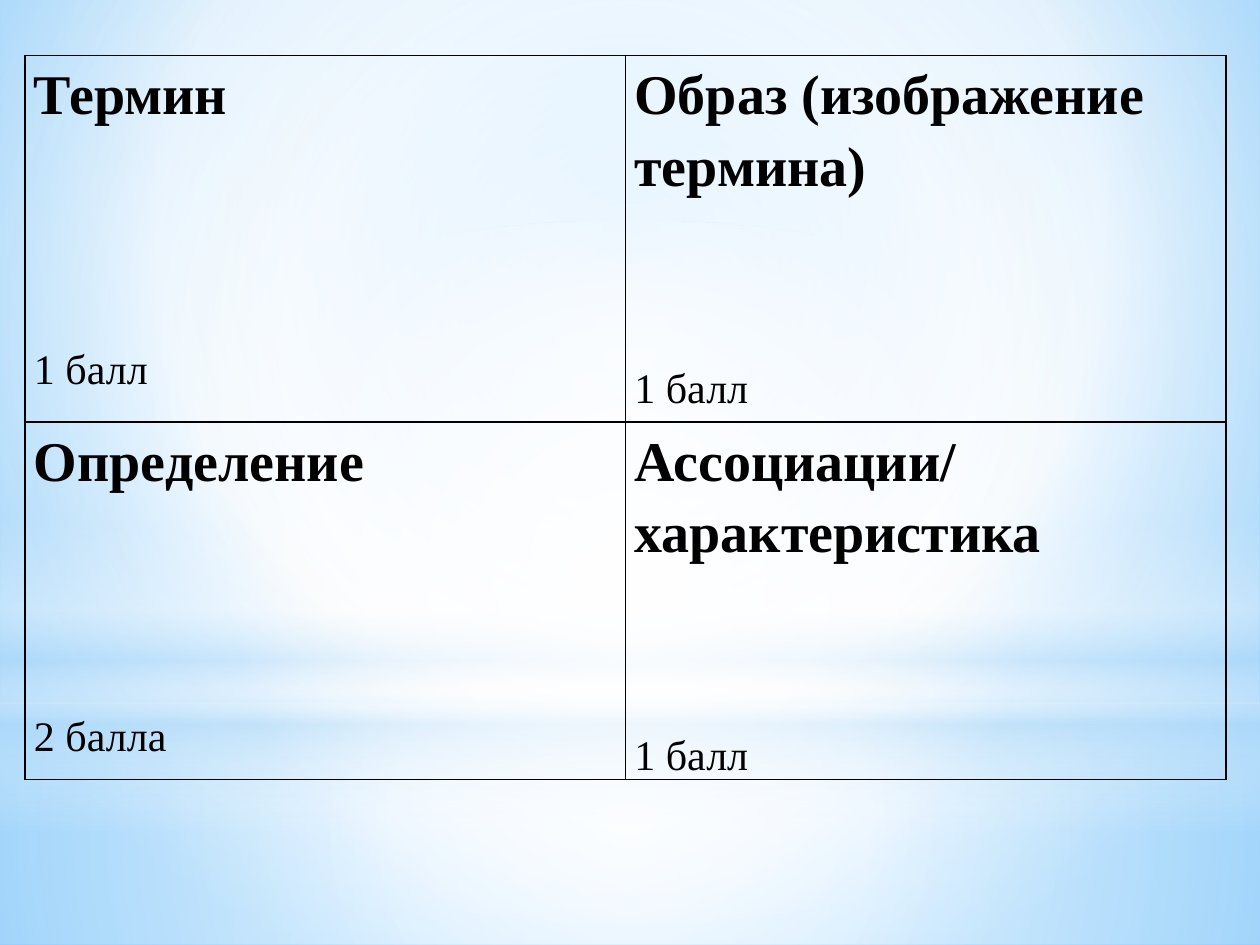
from lxml import etree
from pptx import Presentation
from pptx import util as u
from pptx.dml.color import RGBColor
from pptx.enum import shapes
from pptx.oxml.ns import qn

FONT = "Times New Roman"
CELLS = [
    [("Термин", "1 балл", 122), ("Образ (изображение термина)", "1 балл", 92)],
    [("Определение", "2 балла", 122), ("Ассоциации/характеристика", "1 балл", 92)],
]
CENTRE = (50, 50, 50, 50)
LAYERS = [
    ("RECTANGLE", (0, 5.58, 10, 1.92), CENTRE,
     [(0, "FFFFFF", 91), (37, "FFFFFF", 76), (100, "B4DCFA", 79)]),
    ("RECTANGLE", (0, 0, 10, 5.58), CENTRE,
     [(0, "FFFFFF", 89), (48, "FFFFFF", 62), (100, "B4DCFA", 79)]),
    ("RECTANGLE", (0, 4.12, 10, 2.5), None,
     [(0, "FFFFFF", 0), (29, "FFFFFF", 30), (45, "B4DCFA", 40),
      (55, "FFFFFF", 26), (65, "B4DCFA", 60), (100, "FFFFFF", 0)]),
    ("OVAL", (0, 1.75, 10, 5.58), CENTRE,
     [(0, "FFFFFF", 100), (56, "FFFFFF", 0)]),
]


def color(value):
    """Turn a hex string into a colour."""
    return RGBColor.from_string(value)


def add_node(parent, tag, **attrs):
    """Append a drawing element with the given attributes."""
    return etree.SubElement(parent, qn(tag), {k: str(v) for k, v in attrs.items()})


def set_gradient(fill, props, stops, focus):
    """Give a fill a circular gradient, or a vertical one without a focus."""
    fill.gradient()
    grad = props.find(qn("a:gradFill"))
    for child in list(grad):
        grad.remove(child)
    stop_list = add_node(grad, "a:gsLst")
    for pos, value, alpha in stops:
        stop = add_node(stop_list, "a:gs", pos=pos * 1000)
        tint = add_node(stop, "a:srgbClr", val=value)
        add_node(tint, "a:alpha", val=alpha * 1000)
    if focus:
        sides = {k: v * 1000 for k, v in zip("ltrb", focus)}
        add_node(add_node(grad, "a:path", path="circle"), "a:fillToRect", **sides)
    else:
        add_node(grad, "a:lin", ang=90 * 60000, scaled=0)


def add_backdrop(s):
    """Paint the blue background and its soft light layers."""
    fill = s.background.fill
    props = s._element.find(".//" + qn("p:bgPr"))
    set_gradient(fill, props, [(0, "9ED5FF", 100), (60, "FFFFFF", 100),
                               (100, "5BB9FF", 100)], (20, 10, 20, 60))
    for kind, box, focus, stops in LAYERS:
        sp = s.shapes.add_shape(shapes.MSO_SHAPE[kind], *map(u.Inches, box))
        sp.shadow.inherit = False
        sp.line.fill.background()
        set_gradient(sp.fill, sp._element.spPr, stops, focus)


def add_borders(cell):
    """Draw a thin black line on each side of a cell."""
    props = cell._tc.get_or_add_tcPr()
    for side in "LRTB":
        line = add_node(props, f"a:ln{side}", w=u.Pt(1))
        add_node(add_node(line, "a:solidFill"), "a:srgbClr", val="000000")


def fill_cell(cell, title, score, gap):
    """Write a bold title and, below a gap, its score."""
    add_borders(cell)
    cell.fill.background()
    cell.margin_left = cell.margin_right = u.Inches(0.07)
    cell.margin_top = cell.margin_bottom = 0
    tf = cell.text_frame
    tf.text = f"{title}\n{score}"
    for p, size, bold, before in zip(tf.paragraphs, (32, 24), (True, False), (0, gap)):
        p.line_spacing = 1.15
        p.space_before = u.Pt(before)
        font = p.runs[0].font
        font.name, font.size, font.bold = FONT, u.Pt(size), bold
        font.color.rgb = color("000000")


def add_term_table(s, left, top, width, row_heights):
    """Place the table of the four tasks with equal columns."""
    frame = s.shapes.add_table(len(CELLS), len(CELLS[0]), u.Inches(left), u.Inches(top),
                               u.Inches(width), u.Inches(sum(row_heights)))
    table = frame.table
    table.first_row = table.horz_banding = False
    for row, height, entries in zip(table.rows, row_heights, CELLS):
        row.height = u.Inches(height)
        for cell, entry in zip(row.cells, entries):
            fill_cell(cell, *entry)


def main():
    """Build and save the slide."""
    prs = Presentation()
    prs.slide_width, prs.slide_height = u.Inches(10), u.Inches(7.5)
    s = prs.slides.add_slide(prs.slide_layouts[6])
    add_backdrop(s)
    add_term_table(s, 0.2, 0.44, 9.53, (2.91, 2.83))
    prs.save("out.pptx")


if __name__ == "__main__":
    main()
